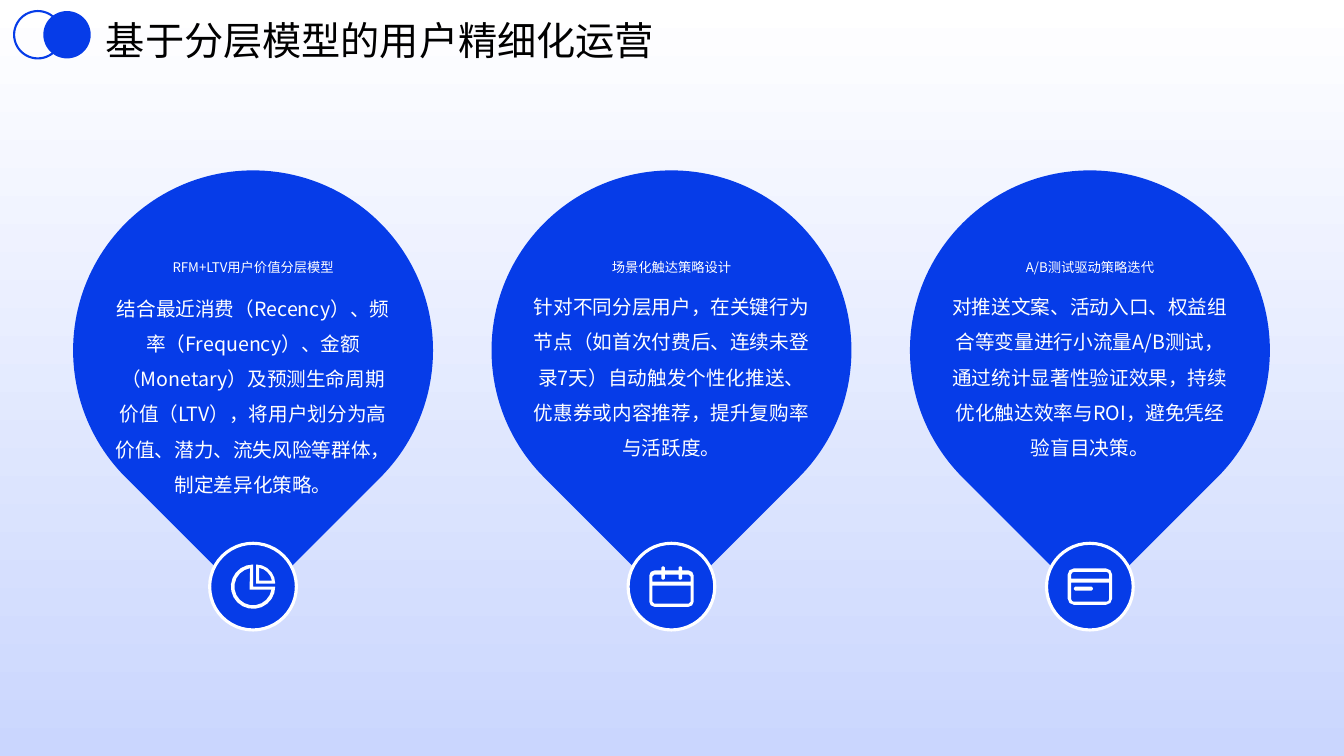
from math import cos, radians, sin

from lxml import etree
from pptx import Presentation
from pptx.dml.color import RGBColor
from pptx.enum.shapes import MSO_SHAPE
from pptx.enum.text import MSO_ANCHOR, MSO_AUTO_SIZE, PP_ALIGN
from pptx.oxml.ns import qn
from pptx.util import Inches, Pt

BLUE = RGBColor(0x06, 0x3C, 0xE8)
PALE_BLUE = RGBColor(0xCA, 0xD6, 0xFE)
WHITE = RGBColor(0xFF, 0xFF, 0xFF)
BLACK = RGBColor(0, 0, 0)
FONT = "Noto Sans CJK SC"
RECTANGLE, TEARDROP, OVAL = MSO_SHAPE.RECTANGLE, MSO_SHAPE.TEAR, MSO_SHAPE.OVAL
CONNECTOR_DOT = MSO_SHAPE.FLOWCHART_CONNECTOR
LEFT, CENTER = PP_ALIGN.LEFT, PP_ALIGN.CENTER
MIDDLE, BOTTOM = MSO_ANCHOR.MIDDLE, MSO_ANCHOR.BOTTOM
NO_AUTOFIT = MSO_AUTO_SIZE.NONE

SLIDE_W, SLIDE_H = 13.33, 7.5
FIRST_CENTER, PITCH = 2.51, 4.15
DROP_TOP, DROP_SIZE = 1.69, 3.57
BADGE_TOP, BADGE_SIZE = 5.39, 0.86
TEXT_W, HEADING_TOP, HEADING_H, BODY_H = 2.75, 2.33, 0.4, 1.91
ICON_UNIT = Inches(0.01)


def arc(cx, cy, radius, start, end, steps):
    """Points along a clockwise arc, angles in degrees from the right."""
    angles = [radians(start + (end - start) * i / steps) for i in range(steps + 1)]
    return [(cx + radius * cos(a), cy + radius * sin(a)) for a in angles]


def corner(cx, cy, radius, start):
    if radius == 0:
        return [(cx, cy)]
    return arc(cx, cy, radius, start, start + 90, 2 if radius > 2 else 1)


def rounded(left, top, right, bottom, top_radius=0, bottom_radius=0):
    """Outline of a rectangle with rounded top and bottom corners."""
    t, b = top_radius, bottom_radius
    return (corner(left + t, top + t, t, 180) + corner(right - t, top + t, t, 270)
            + corner(right - b, bottom - b, b, 0) + corner(left + b, bottom - b, b, 90))


# Icon outlines in hundredths of an inch; nested outlines cut holes.
PIE_ICON = (44, 44, [
    arc(22, 22, 22, 0, 270, 16) + [(22, 22)],
    arc(22, 22, 18.5, 9, 261, 14) + [(18.5, 25)],
    arc(25, 19, 19, 270, 360, 5) + [(25, 19)],
    arc(25, 19, 16, 281, 349, 4) + [(28, 16)],
])
CALENDAR_ICON = (44, 40, [
    rounded(0, 4, 44, 40, 5, 5),
    rounded(3, 8, 41, 15, 2),
    rounded(3, 19, 41, 37, 0, 2),
    *[outline for x in (12, 29)
      for outline in (rounded(x, 0, x + 3.5, 4, 1),
                      rounded(x, 8, x + 3.5, 13, 0, 1))],
])
CARD_ICON = (44, 36, [
    rounded(0, 0, 44, 36, 6, 6),
    rounded(3.5, 3.5, 41, 10, 2.5),
    rounded(3.5, 14, 41, 33, 0, 2.5),
    rounded(6, 18, 25, 22, 1.5, 1.5),
])

STRATEGIES = [
    ("RFM+LTV用户价值分层模型",
     "结合最近消费（Recency）、频率（Frequency）、金额（Monetary）及预测生命周期价值（LTV），"
     "将用户划分为高价值、潜力、流失风险等群体，制定差异化策略。",
     2.92, PIE_ICON),
    ("场景化触达策略设计",
     "针对不同分层用户，在关键行为节点（如首次付费后、连续未登录7天）自动触发个性化推送、"
     "优惠券或内容推荐，提升复购率与活跃度。",
     2.73, CALENDAR_ICON),
    ("A/B测试驱动策略迭代",
     "对推送文案、活动入口、权益组合等变量进行小流量A/B测试，通过统计显著性验证效果，"
     "持续优化触达效率与ROI，避免凭经验盲目决策。",
     2.73, CARD_ICON),
]


def paint(shape, fill=None, line=None, width=0):
    shape.shadow.inherit = False
    if fill is None:
        shape.fill.background()
    else:
        shape.fill.solid()
        shape.fill.fore_color.rgb = fill
    if line is None:
        shape.line.fill.background()
    else:
        shape.line.color.rgb = line
        shape.line.width = Pt(width)


def add_disc(slide, kind, left, top, size, **colours):
    box = [Inches(v) for v in (left, top, size, size)]
    disc = slide.shapes.add_shape(kind, *box)
    paint(disc, **colours)
    return disc


def write(frame, text, size, colour, align, anchor, spacing):
    frame.word_wrap = True
    frame.auto_size = NO_AUTOFIT
    frame.vertical_anchor = anchor
    paragraph = frame.paragraphs[0]
    paragraph.alignment = align
    paragraph.line_spacing = spacing
    run = paragraph.add_run()
    run.text = text
    run.font.size = Pt(size)
    run.font.color.rgb = colour
    run.font.name = FONT
    etree.SubElement(run.font._element, qn("a:ea"), typeface=FONT)


def add_centered_text(slide, center, top, height, text, size, anchor, spacing):
    box = slide.shapes.add_textbox(Inches(center - TEXT_W / 2), Inches(top),
                                   Inches(TEXT_W), Inches(height))
    frame = box.text_frame
    frame.margin_left = frame.margin_right = 0
    frame.margin_top = frame.margin_bottom = 0
    write(frame, text, size, WHITE, CENTER, anchor, spacing)


def add_icon(slide, center_x, center_y, icon):
    width, height, outlines = icon
    fine = [[(x * ICON_UNIT, y * ICON_UNIT) for x, y in outline] for outline in outlines]
    builder = slide.shapes.build_freeform(*fine[0][0])
    builder.add_line_segments(fine[0][1:], close=True)
    for outline in fine[1:]:
        builder.move_to(*outline[0])
        builder.add_line_segments(outline[1:], close=True)
    drawn = builder.convert_to_shape(Inches(center_x) - width * ICON_UNIT // 2,
                                     Inches(center_y) - height * ICON_UNIT // 2)
    paint(drawn, WHITE)


def add_strategy(slide, center, heading, body, body_top, icon):
    drop = add_disc(slide, TEARDROP, center - DROP_SIZE / 2, DROP_TOP, DROP_SIZE, fill=BLUE)
    drop.rotation = 135
    add_disc(slide, OVAL, center - BADGE_SIZE / 2, BADGE_TOP, BADGE_SIZE,
             fill=BLUE, line=WHITE, width=2.25)
    add_icon(slide, center, BADGE_TOP + BADGE_SIZE / 2, icon)
    add_centered_text(slide, center, body_top, BODY_H, body, 14, MIDDLE, 1.5)
    add_centered_text(slide, center, HEADING_TOP, HEADING_H, heading, 9.5, BOTTOM, 1.3)


def add_header(slide, left, top, text):
    title = slide.shapes.title
    title.element.getparent().append(title.element)  # in front of the backdrop
    title.left, title.top = Inches(left + 0.81), Inches(top - 0.01)
    title.width, title.height = Inches(9.84), Inches(0.49)
    write(title.text_frame, text, 28, BLACK, LEFT, MIDDLE, 1.2)
    add_disc(slide, CONNECTOR_DOT, left + 0.29, top, 0.47, fill=BLUE)
    add_disc(slide, CONNECTOR_DOT, left, top, 0.47, line=BLUE, width=1.5)


def add_backdrop(slide):
    backdrop = slide.shapes.add_shape(RECTANGLE, 0, 0, Inches(SLIDE_W), Inches(SLIDE_H))
    paint(backdrop)
    backdrop.fill.gradient()
    backdrop.fill.gradient_angle = 270
    stops = backdrop.fill.gradient_stops
    for stop, colour, position in zip(stops, (WHITE, PALE_BLUE), (0, 1)):
        stop.color.rgb = colour
        stop.position = position


def main():
    deck = Presentation()
    deck.slide_width, deck.slide_height = Inches(SLIDE_W), Inches(SLIDE_H)
    slide = deck.slides.add_slide(deck.slide_layouts[5])
    add_backdrop(slide)
    for column, strategy in enumerate(STRATEGIES):
        add_strategy(slide, FIRST_CENTER + column * PITCH, *strategy)
    add_header(slide, 0.14, 0.11, "基于分层模型的用户精细化运营")
    deck.save("out.pptx")


if __name__ == "__main__":
    main()
